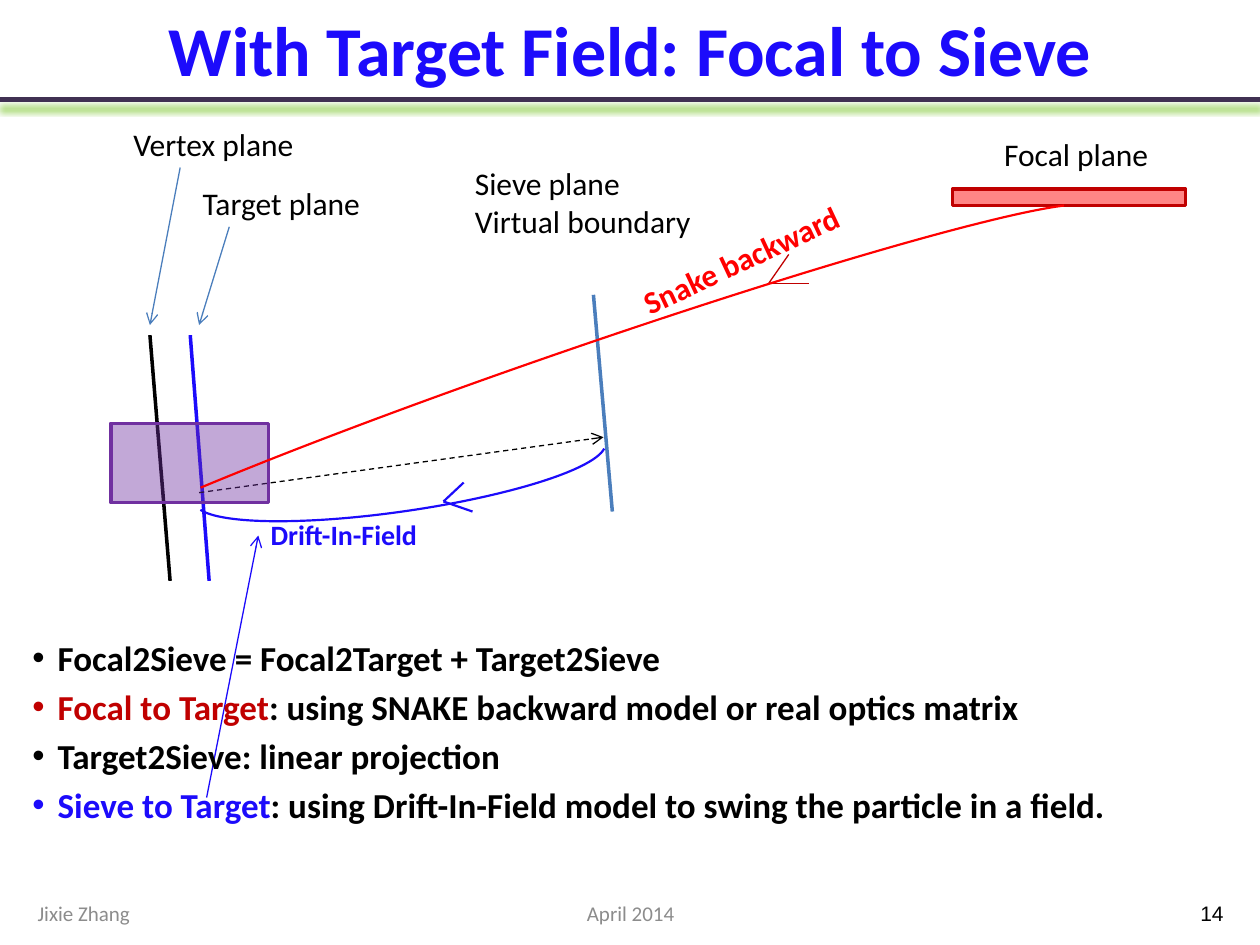
from lxml.etree import SubElement
from pptx import Presentation
from pptx.dml.color import RGBColor
from pptx.enum.dml import MSO_LINE_DASH_STYLE as DASH
from pptx.enum.shapes import MSO_CONNECTOR, MSO_SHAPE as SHAPE
from pptx.enum.text import MSO_ANCHOR as ANCHOR, PP_ALIGN as ALIGN
from pptx.oxml.ns import qn
from pptx.util import Inches, Pt

BLUE, RED, DARK_RED, BLACK = "1C0BFB", "FF0000", "C00000", "000000"
STEEL, PURPLE, GREY = "4B7EBC", "7030A0", "8C8C8C"

deck = Presentation()
deck.slide_width, deck.slide_height = Inches(10), Inches(7.5)
slide = deck.slides.add_slide(deck.slide_layouts[6])
shapes = slide.shapes
# Grid of 100 columns by 75 rows
CELL = deck.slide_width / 100


def grid(*cells):
    return [round(cell * CELL) for cell in cells]


def paint(color_format, color):
    color_format.rgb = RGBColor.from_string(color)


# Header rule with a green glow below it, then the planes, rays and pointers
rule = (0, 7.9, 100, 7.9)
lines = [
    (rule, "403152", 3, ""),
    ((16.4, 63.3, 20.5, 42.5), BLUE, 0.75, "arrow"),
    ((15.1, 26.6, 16.6, 46.1), BLUE, 2, ""),
    ((11.9, 26.6, 13.5, 46.1), BLACK, 2, ""),
    ((47.1, 23.4, 48.6, 40.6), STEEL, 2, ""),
    ((14.3, 13.3, 11.9, 25.8), STEEL, 0.75, "arrow"),
    ((18.2, 18, 15.8, 25.8), STEEL, 0.75, "arrow"),
    ((61, 22.5, 64.2, 22.5), DARK_RED, 0.75, ""),
    ((61, 22.5, 62.6, 20.2), DARK_RED, 0.75, ""),
    ((35.2, 39.8, 37.5, 40.6), BLUE, 1.25, ""),
    ((35.2, 39.8, 36.8, 38.3), BLUE, 1.25, ""),
    ((15.8, 39.1, 47.9, 34.7), BLACK, 0.75, "dash arrow"),
]
for ends, color, width, style in lines:
    line = shapes.add_connector(MSO_CONNECTOR.STRAIGHT, *grid(*ends))
    paint(line.line.color, color)
    line.line.width = Pt(width)
    if "dash" in style:
        line.line.dash_style = DASH.DASH
    if "arrow" in style:
        SubElement(line.line._get_or_add_ln(), qn("a:tailEnd"), type="arrow")
    effects = SubElement(line._element.spPr, qn("a:effectLst"))
    if ends == rule:
        glow = SubElement(effects, qn("a:outerShdw"), blurRad=str(Pt(4)),
                          dist=str(Pt(4)), dir="5400000", algn="t", rotWithShape="0")
        SubElement(glow, qn("a:srgbClr"), val="92D050")

# Target box and focal plane bar
for place, fill, edge, opacity in [
    ((8.8, 33.6, 12.5, 6.3), PURPLE, PURPLE, 42),
    ((75.6, 15, 18.5, 1.3), RED, DARK_RED, 48),
]:
    box = shapes.add_shape(SHAPE.RECTANGLE, *grid(*place))
    box.shadow.inherit = False
    box.fill.solid()
    paint(box.fill.fore_color, fill)
    tint = box._element.spPr.find(qn("a:solidFill")).find(qn("a:srgbClr"))
    SubElement(tint, qn("a:alpha"), val=str(opacity * 1000))
    paint(box.line.color, edge)
    box.line.width = Pt(2)

# Curved trajectories
for place, turn, sweep, color in [
    ((15.3, 34.5, 32.9, 6.1), 351.8, (109.34, 215.18), BLUE),
    ((0.9, 28, 88.1, 5.8), 160.9, (108.7, 213.57), RED),
]:
    track = shapes.add_shape(SHAPE.ARC, *grid(*place))
    track.shadow.inherit = False
    track.fill.background()
    track.adjustments[0], track.adjustments[1] = sweep
    track.rotation = turn
    track._element.spPr.xfrm.set("flipV", "1")
    paint(track.line.color, color)
    track.line.width = Pt(1.25)

# Text: place, paragraphs of (words, colour) runs, format
label = {"size": 18}
footer = {"size": 12, "anchor": ANCHOR.MIDDLE}
texts = [
    ((0, 0, 100, 7.2), [[("With Target Field: Focal to Sieve", BLUE)]],
     {"size": 40, "bold": True, "align": ALIGN.CENTER}),
    ((1.6, 50, 97.7, 15.8), [
        [("Focal2Sieve = Focal2Target + Target2Sieve", BLACK)],
        [("Focal to Target", DARK_RED),
         (": using SNAKE backward model or real optics matrix", BLACK)],
        [("Target2Sieve: linear projection", BLACK)],
        [("Sieve to Target", BLUE),
         (": using Drift-In-Field model to swing the particle in a field.", BLACK)],
    ], {"size": 20, "bold": True, "bullet": "•"}),
    ((2, 70.9, 23.3, 3.2), [[("Jixie Zhang", GREY)]], footer),
    ((34.2, 70.9, 31.7, 3.2), [[("April 2014", GREY)]], footer | {"align": ALIGN.CENTER}),
    ((74.8, 70.9, 23.3, 3.2), [[("14", BLACK)]],
     footer | {"align": ALIGN.RIGHT, "font": "Arial"}),
    ((15.1, 14.1, 18.8, 4), [[("Target plane", BLACK)]], label),
    ((9.6, 9.4, 18.8, 4), [[("Vertex plane", BLACK)]], label),
    ((36.7, 12.5, 24.2, 7.1), [[("Sieve plane", BLACK)], [("Virtual boundary", BLACK)]], label),
    ((78.7, 10.2, 16.2, 4), [[("Focal plane", BLACK)]], label),
    ((49.3, 18.1, 21.1, 4), [[("Snake backward", RED)]],
     label | {"bold": True, "turn": 334.9}),
    ((20.5, 40.6, 22.7, 3.7), [[("Drift-In-Field", BLUE)]], {"size": 16, "bold": True}),
]
for place, paragraphs, style in texts:
    text = shapes.add_textbox(*grid(*place))
    text.rotation = style.get("turn", 0)
    frame = text.text_frame
    frame.word_wrap = True
    frame.vertical_anchor = style.get("anchor", ANCHOR.TOP)
    for index, runs in enumerate(paragraphs):
        paragraph = frame.add_paragraph() if index else frame.paragraphs[0]
        paragraph.alignment = style.get("align", ALIGN.LEFT)
        if "bullet" in style:
            paragraph.space_before = Pt(style["size"] * 0.2)
            props = paragraph._p.get_or_add_pPr()
            props.set("marL", str(Inches(0.2)))
            props.set("indent", str(-Inches(0.2)))
            SubElement(props, qn("a:buFont"), typeface="Arial")
            SubElement(props, qn("a:buChar"), char=style["bullet"])
        for words, color in runs:
            run = paragraph.add_run()
            run.text = words
            run.font.name = style.get("font", "Calibri")
            run.font.size = Pt(style["size"])
            run.font.bold = style.get("bold", False)
            paint(run.font.color, color)

deck.save("out.pptx")
